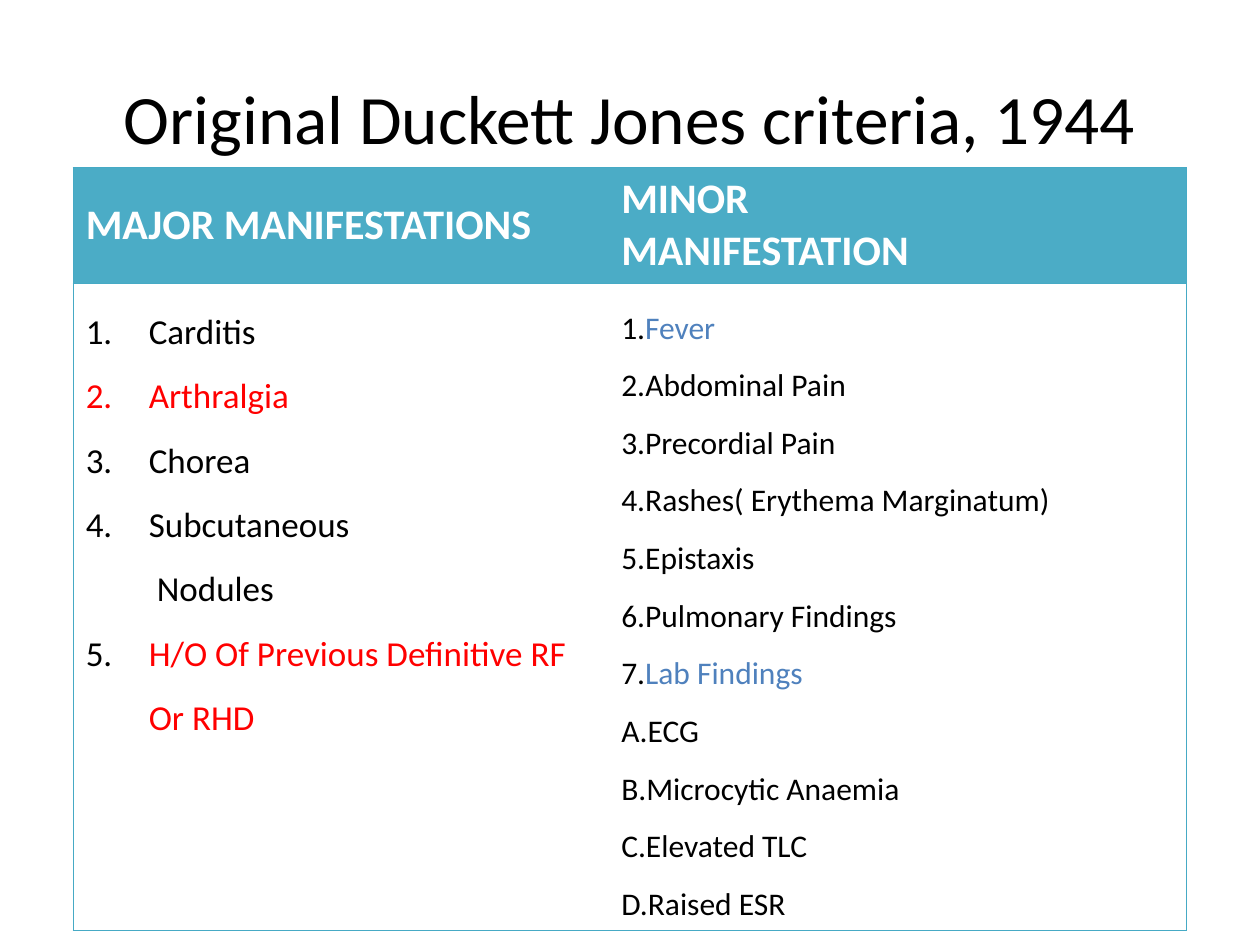
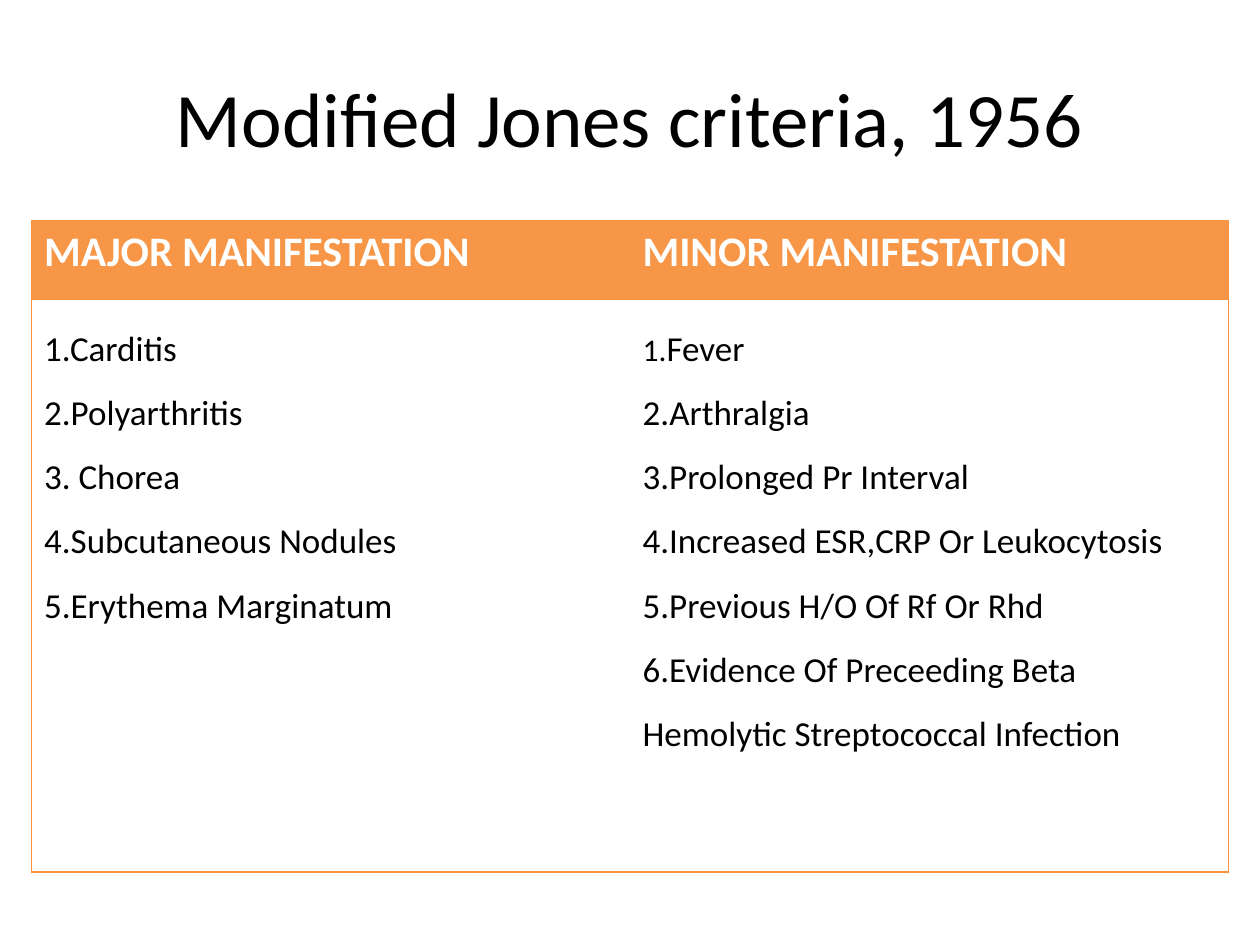
from lxml import etree
from pptx import Presentation
from pptx.dml.color import RGBColor
from pptx.enum import text
from pptx.oxml import ns
from pptx.util import Pt

BLACK = RGBColor(0x00, 0x00, 0x00)
WHITE = RGBColor(0xFF, 0xFF, 0xFF)
RED = RGBColor(0xFF, 0x00, 0x00)
BLUE = RGBColor(0x4F, 0x81, 0xBD)
TEAL = RGBColor(0x4B, 0xAC, 0xC6)
TEAL_EDGE = RGBColor(0x46, 0xAA, 0xC5)
ORANGE = RGBColor(0xF7, 0x96, 0x46)
ORANGE_EDGE = RGBColor(0xF6, 0x92, 0x40)


class CriteriaDeck:
    """Builds criteria slides that share a title style and a two-column table."""

    font = "Calibri"
    heading = {"size": Pt(24), "bold": True, "color": WHITE}
    hanging = {"marL": Pt(36), "indent": Pt(-36)}

    def __init__(self):
        self.deck = Presentation()
        self.deck.slide_width, self.deck.slide_height = Pt(720), Pt(540)
        self.page = None

    def add_page(self, title, size):
        self.page = self.deck.slides.add_slide(self.deck.slide_layouts[6])
        box = self.page.shapes.add_textbox(Pt(36), Pt(21.6), Pt(648), Pt(90))
        frame = box.text_frame
        frame.word_wrap = True
        frame.vertical_anchor = text.MSO_ANCHOR.MIDDLE
        frame.paragraphs[0].alignment = text.PP_ALIGN.CENTER
        self.add_span(frame.paragraphs[0], title, size=Pt(size))

    def add_span(self, para, words, color=BLACK, **formats):
        span = para.add_run()
        span.text = words
        span.font.color.rgb = color
        for name, value in {"name": self.font, "bold": False, **formats}.items():
            setattr(span.font, name, value)

    def add_lines(self, cell, lines, spacing=1.5, **formats):
        frame = cell.text_frame
        for index, line in enumerate(lines):
            para = frame.add_paragraph() if index else frame.paragraphs[0]
            para.line_spacing = spacing
            item = line if isinstance(line, dict) else {"spans": [line]}
            for span in item["spans"]:
                words, changes = span if isinstance(span, tuple) else (span, {})
                self.add_span(para, words, **{**formats, **changes})
            self.set_indent(para, **item.get("layout", {}))

    def set_indent(self, para, start=None, number_color=None, **lengths):
        properties = para._p.get_or_add_pPr()
        for name, value in lengths.items():
            properties.set(name, str(int(value)))
        if number_color is not None:
            tint = etree.SubElement(properties, ns.qn("a:buClr"))
            etree.SubElement(tint, ns.qn("a:srgbClr"), val=str(number_color))
            number = etree.SubElement(properties, ns.qn("a:buAutoNum"), type="arabicPeriod")
            if start:
                number.set("startAt", str(start))

    def set_borders(self, cell, colors):
        properties = cell._tc.get_or_add_tcPr()
        for side, color in colors.items():
            line = etree.SubElement(properties, ns.qn(f"a:ln{side}"), w=str(int(Pt(0.75))))
            if color is None:
                etree.SubElement(line, ns.qn("a:noFill"))
            else:
                fill = etree.SubElement(line, ns.qn("a:solidFill"))
                etree.SubElement(fill, ns.qn("a:srgbClr"), val=str(color))

    def add_table(self, left, top, widths, heights, band, edge):
        frame = self.page.shapes.add_table(
            2, 2, Pt(left), Pt(top), Pt(sum(widths)), Pt(sum(heights)))
        table = frame.table
        table.first_row = table.horz_banding = False
        for column, width in zip(table.columns, widths):
            column.width = Pt(width)
        for row, height in zip(table.rows, heights):
            row.height = Pt(height)
        for row in range(2):
            for column in range(2):
                cell = table.cell(row, column)
                self.set_borders(cell, {
                    "L": None if column else edge, "R": edge if column else None,
                    "T": edge, "B": edge})
                if row:
                    cell.fill.background()
                else:
                    cell.fill.solid()
                    cell.fill.fore_color.rgb = band
        return table

    def numbered(self, words, color=BLACK, number_color=None, start=None):
        layout = {**self.hanging, "number_color": number_color or color, "start": start}
        return {"spans": [(words, {"color": color})], "layout": layout}


def add_first_criteria(deck):
    deck.add_page("Original Duckett Jones criteria, 1944", 39.6)
    table = deck.add_table(41.8, 95.8, (306, 330.2), (66.2, 369.7), TEAL, TEAL_EDGE)
    deck.add_lines(table.cell(0, 0), ["MAJOR MANIFESTATIONS"], **deck.heading)
    deck.add_lines(table.cell(0, 1), ["MINOR", "MANIFESTATION"], 1.0, **deck.heading)
    deck.add_lines(table.cell(1, 0), [
        deck.numbered("Carditis"),
        deck.numbered("Arthralgia", RED),
        deck.numbered("Chorea"),
        deck.numbered("Subcutaneous"),
        {"spans": ["Nodules"], "layout": {"marL": Pt(40.6), "indent": Pt(0)}},
        deck.numbered("H/O Of Previous Definitive RF Or RHD", RED, BLACK, 5),
    ], size=Pt(20))
    deck.add_lines(table.cell(1, 1), [
        {"spans": ["1.", ("Fever", {"color": BLUE})]},
        "2.Abdominal Pain",
        "3.Precordial Pain",
        "4.Rashes( Erythema Marginatum)",
        "5.Epistaxis",
        "6.Pulmonary Findings",
        {"spans": ["7.", ("Lab Findings", {"color": BLUE})]},
        "A.ECG",
        "B.Microcytic Anaemia",
        "C.Elevated TLC",
        "D.Raised ESR",
    ], size=Pt(18))


def add_modified_criteria(deck):
    deck.add_page("Modified Jones criteria, 1956", 44)
    table = deck.add_table(18, 126, (342, 342), (45.4, 326.9), ORANGE, ORANGE_EDGE)
    for column, kind in enumerate(("MAJOR", "MINOR")):
        deck.add_lines(table.cell(0, column), [f"{kind} MANIFESTATION"], 1.0, **deck.heading)
    deck.add_lines(table.cell(1, 0), [
        "1.Carditis",
        "2.Polyarthritis",
        "3. Chorea",
        "4.Subcutaneous Nodules",
        "5.Erythema Marginatum",
    ], size=Pt(20))
    deck.add_lines(table.cell(1, 1), [
        {"spans": [("1.", {"size": Pt(18)}), "Fever"]},
        "2.Arthralgia",
        "3.Prolonged Pr Interval",
        "4.Increased ESR,CRP Or Leukocytosis",
        "5.Previous H/O Of Rf Or Rhd",
        "6.Evidence Of Preceeding Beta Hemolytic Streptococcal Infection",
    ], size=Pt(20))


def main():
    criteria = CriteriaDeck()
    add_first_criteria(criteria)
    add_modified_criteria(criteria)
    criteria.deck.save("out.pptx")


if __name__ == "__main__":
    main()
